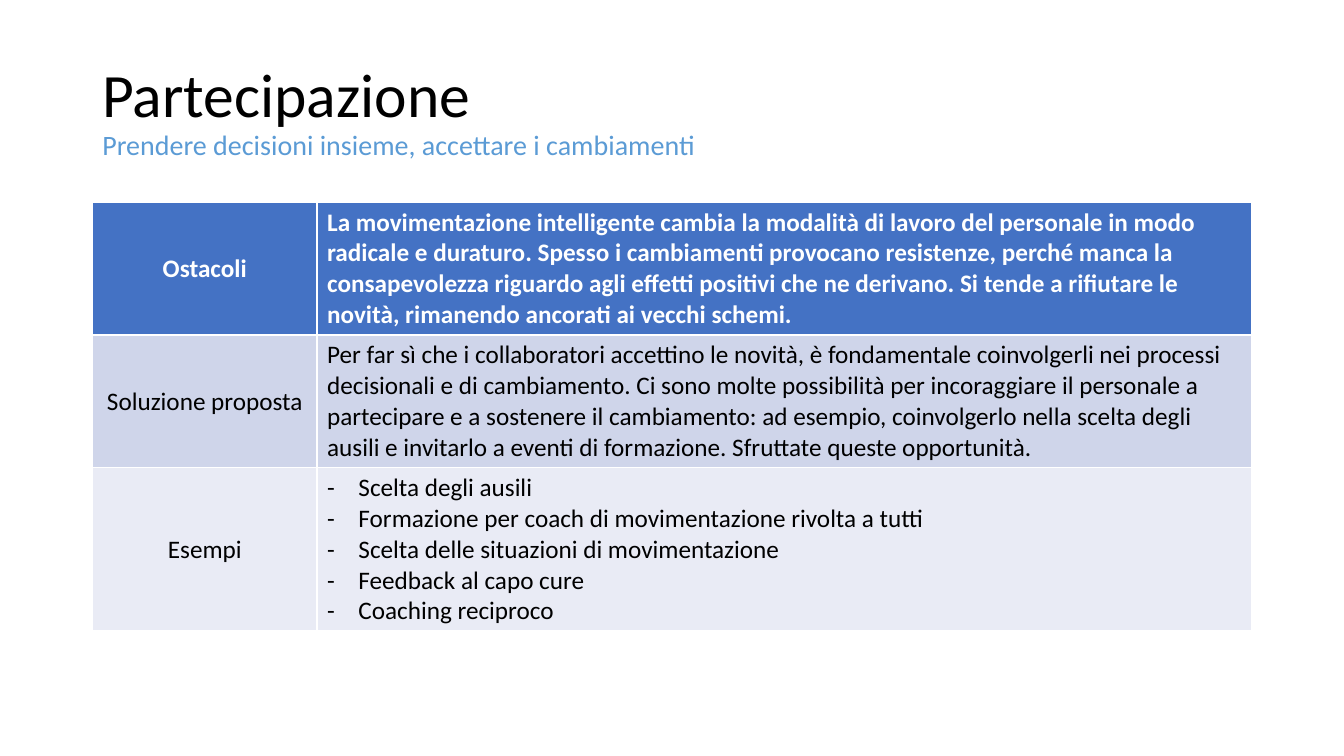
from lxml.etree import SubElement
from pptx import Presentation
from pptx.dml.color import RGBColor
from pptx.enum.text import MSO_ANCHOR, PP_ALIGN
from pptx.oxml.ns import qn
from pptx.util import Cm, Pt

BLACK = RGBColor(0x00, 0x00, 0x00)
WHITE = RGBColor(0xFF, 0xFF, 0xFF)
SKY = RGBColor(0x5B, 0x9B, 0xD5)
BLUE = RGBColor(0x44, 0x72, 0xC4)
LAVENDER = RGBColor(0xCF, 0xD5, 0xEA)
PALE = RGBColor(0xE9, 0xEB, 0xF5)

ROWS = [
    ("Ostacoli", [
        "La movimentazione intelligente cambia la modalità di lavoro del personale in modo "
        "radicale e duraturo. Spesso i cambiamenti provocano resistenze, perché manca la "
        "consapevolezza riguardo agli effetti positivi che ne derivano. Si tende a rifiutare le "
        "novità, rimanendo ancorati ai vecchi schemi.",
    ], BLUE, WHITE, 3.35),
    ("Soluzione proposta", [
        "Per far sì che i collaboratori accettino le novità, è fondamentale coinvolgerli nei processi "
        "decisionali e di cambiamento. Ci sono molte possibilità per incoraggiare il personale a "
        "partecipare e a sostenere il cambiamento: ad esempio, coinvolgerlo nella scelta degli "
        "ausili e invitarlo a eventi di formazione. Sfruttate queste opportunità.",
    ], LAVENDER, BLACK, 3.35),
    ("Esempi", [
        "Scelta degli ausili",
        "Formazione per coach di movimentazione rivolta a tutti",
        "Scelta delle situazioni di movimentazione",
        "Feedback al capo cure",
        "Coaching reciproco",
    ], PALE, BLACK, 4.11),
]


def style_font(font, size, color, bold=False):
    font.name = "Calibri"
    font.size = Pt(size)
    font.color.rgb = color
    font.bold = bold


def add_dash(para):
    properties = para._p.get_or_add_pPr()
    properties.set("marL", str(Cm(0.79)))
    properties.set("indent", str(-Cm(0.79)))
    SubElement(properties, qn("a:buFont"), typeface="Calibri")
    SubElement(properties, qn("a:buChar"), char="-")


deck = Presentation()
deck.slide_width = Cm(33.87)
deck.slide_height = Cm(19.05)
page = deck.slides.add_slide(deck.slide_layouts[6])

title_box = page.shapes.add_textbox(Cm(2.33), Cm(1.01), Cm(29.21), Cm(3.68))
title_box.text_frame.word_wrap = True
title_box.text_frame.vertical_anchor = MSO_ANCHOR.MIDDLE
para = title_box.text_frame.paragraphs[0]
para.line_spacing = 0.9
title = para.add_run()
title.text = "Partecipazione"
style_font(title.font, 44, BLACK)
para.add_line_break()
subtitle = para.add_run()
subtitle.text = "Prendere decisioni insieme, accettare i cambiamenti"
style_font(subtitle.font, 20, SKY)

total_height = sum(row[-1] for row in ROWS)
table = page.shapes.add_table(
    len(ROWS), 2, Cm(2.33), Cm(5.09), Cm(29.21), Cm(total_height)
).table
table.columns[0].width = Cm(5.66)
table.columns[1].width = Cm(23.55)

for index, (label, lines, fill, color, height) in enumerate(ROWS):
    table.rows[index].height = Cm(height)
    for column, texts in enumerate(([label], lines)):
        cell = table.cell(index, column)
        cell.fill.solid()
        cell.fill.fore_color.rgb = fill
        cell.vertical_anchor = MSO_ANCHOR.MIDDLE
        cell.text = "\n".join(texts)
        for para in cell.text_frame.paragraphs:
            para.alignment = PP_ALIGN.LEFT if column else PP_ALIGN.CENTER
            if len(texts) > 1:
                add_dash(para)
            style_font(para.font, 18, color, bold=index == 0)

deck.save("out.pptx")
